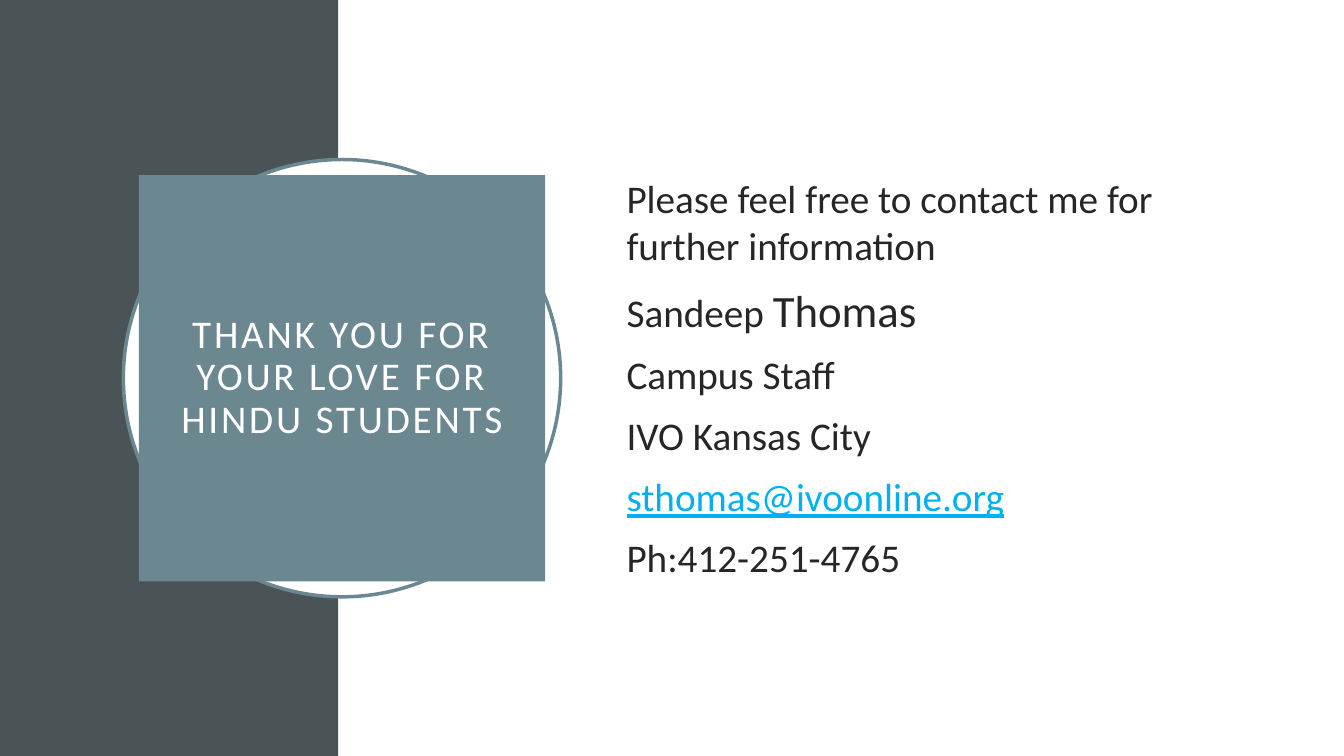
"""Build a closing slide with a thank-you panel and contact details."""
from pptx import Presentation
from pptx import util as u
from pptx.dml.color import RGBColor
from pptx.enum import shapes, text

SLIDE_WIDTH, SLIDE_HEIGHT = 33.87, 19.05
BAND_WIDTH = 8.53
PANEL_CENTER = (8.62, 9.53)
RING_SIZE, PANEL_SIZE = 11.02, 10.24

SLATE, TEAL, WHITE, INK, LINK = "4A5356", "6B8891", "FFFFFF", "262626", "00B0F0"

CONTACT_LINES = [
    [("Please feel free to contact me for further information", {})],
    [("Sandeep ", {}), ("Thomas", {"size": 32})],
    [("Campus Staff", {})],
    [("IVO Kansas City", {})],
    [("sthomas@ivoonline.org", {"color": LINK, "underline": True})],
    [("Ph:412-251-4765", {})],
]


def rgb(value):
    return RGBColor.from_string(value)


def centered_square(size):
    return [center - size / 2 for center in PANEL_CENTER] + [size, size]


def add_run(paragraph, content, size=28, color=INK, underline=None, spacing=0):
    run = paragraph.add_run()
    run.text = content
    run.font.name = "Calibri"
    run.font.size = u.Pt(size)
    run.font.color.rgb = rgb(color)
    run.font.underline = underline
    if spacing:
        run.font._element.set("spc", str(spacing * 100))


class SlideBuilder:
    def __init__(self, presentation):
        layout = presentation.slide_layouts.get_by_name("Title Only")
        self.slide = presentation.slides.add_slide(layout)
        self.slide.background.fill.solid()
        self.slide.background.fill.fore_color.rgb = rgb(WHITE)

    def add_shape(self, kind, box, fill, line=None):
        shape = self.slide.shapes.add_shape(kind, *map(u.Cm, box))
        shape.shadow.inherit = False
        shape.fill.solid()
        shape.fill.fore_color.rgb = rgb(fill)
        if line:
            shape.line.color.rgb = rgb(line)
            shape.line.width = u.Pt(2.5)
        else:
            shape.line.fill.background()

    def set_title(self, content, box, fill):
        title = self.slide.shapes.title
        title.left, title.top, title.width, title.height = map(u.Cm, box)
        title.fill.solid()
        title.fill.fore_color.rgb = rgb(fill)
        frame = title.text_frame
        frame.word_wrap = True
        frame.auto_size = text.MSO_AUTO_SIZE.NONE
        frame.vertical_anchor = text.MSO_ANCHOR.MIDDLE
        frame.margin_left = frame.margin_right = u.Cm(0.51)
        frame.margin_top = frame.margin_bottom = u.Cm(0.51)
        paragraph = frame.paragraphs[0]
        paragraph.alignment = text.PP_ALIGN.CENTER
        paragraph.line_spacing = 0.9
        add_run(paragraph, content, color=WHITE, spacing=2)
        self.slide.shapes._spTree.append(title._element)

    def add_text(self, lines, box):
        frame = self.slide.shapes.add_textbox(*map(u.Cm, box)).text_frame
        frame.word_wrap = True
        frame.vertical_anchor = text.MSO_ANCHOR.MIDDLE
        for index, runs in enumerate(lines):
            paragraph = frame.add_paragraph() if index else frame.paragraphs[0]
            paragraph.space_before = u.Pt(10)
            for content, style in runs:
                add_run(paragraph, content, **style)


def main():
    presentation = Presentation()
    presentation.slide_width = u.Cm(SLIDE_WIDTH)
    presentation.slide_height = u.Cm(SLIDE_HEIGHT)
    builder = SlideBuilder(presentation)
    rectangle, oval = shapes.MSO_SHAPE.RECTANGLE, shapes.MSO_SHAPE.OVAL
    builder.add_shape(rectangle, (0, 0, BAND_WIDTH, SLIDE_HEIGHT), SLATE)
    builder.add_shape(
        rectangle, (BAND_WIDTH, 0, SLIDE_WIDTH - BAND_WIDTH, SLIDE_HEIGHT), WHITE
    )
    builder.add_shape(oval, centered_square(RING_SIZE), WHITE, line=TEAL)
    builder.set_title(
        "THANK YOU FOR YOUR LOVE FOR HINDU STUDENTS",
        centered_square(PANEL_SIZE),
        TEAL,
    )
    builder.add_text(CONTACT_LINES, (15.54, 3.89, 14.78, 11.25))
    presentation.save("out.pptx")


if __name__ == "__main__":
    main()
